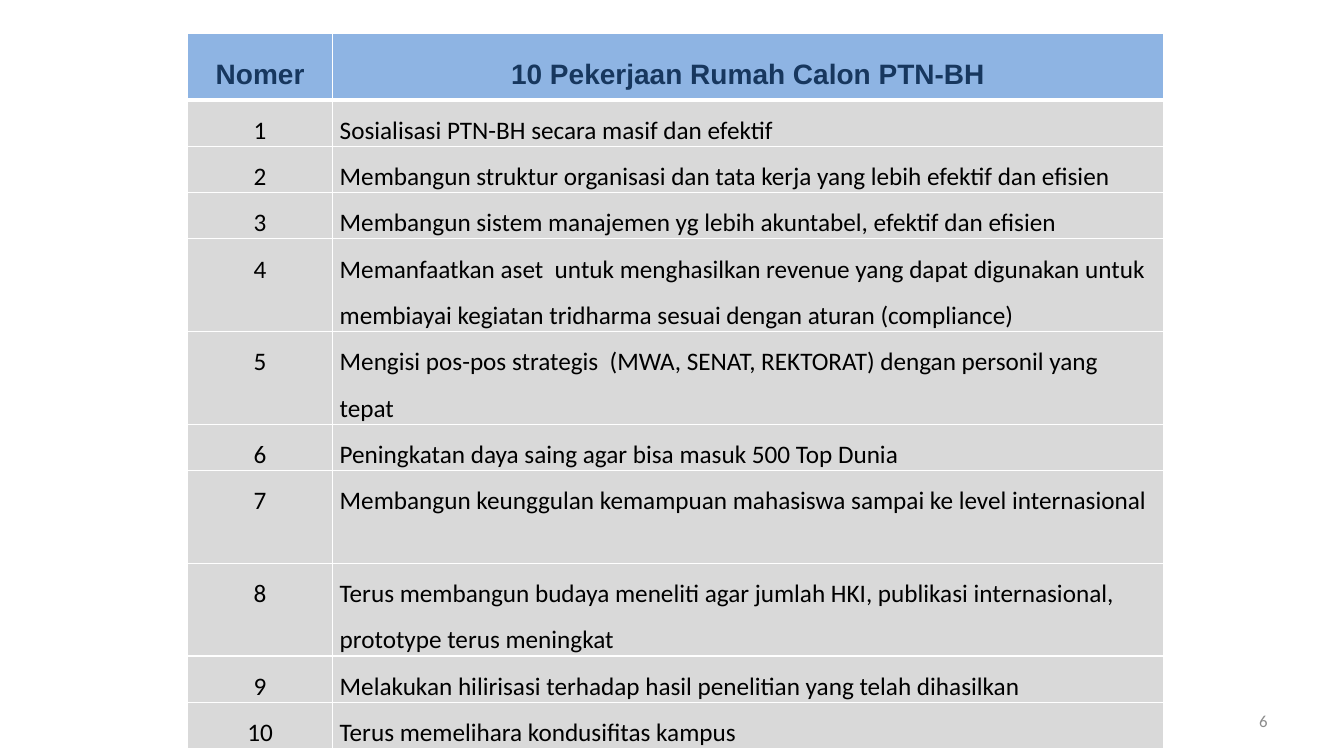
from lxml.etree import SubElement
from pptx import Presentation
from pptx.dml.color import RGBColor
from pptx.enum.text import MSO_ANCHOR, PP_ALIGN
from pptx.oxml.ns import qn
from pptx.util import Inches, Pt

WHITE = RGBColor(0xFF, 0xFF, 0xFF)
BLACK = RGBColor(0, 0, 0)
NAVY = RGBColor(0x17, 0x37, 0x5E)
HEADER_BLUE = RGBColor(0x8E, 0xB4, 0xE3)
BODY_GRAY = RGBColor(0xD9, 0xD9, 0xD9)
NUMBER_GRAY = RGBColor(0x8C, 0x8C, 0x8C)

COLUMN_WIDTHS = (1.44, 8.24)
HEADER_HEIGHT = 0.66
LINE_HEIGHT = 0.46
HEADINGS = ("Nomer", "10 Pekerjaan Rumah Calon PTN-BH")
# Each task with the number of lines its row holds
TASKS = (
    ("Sosialisasi PTN-BH secara masif dan efektif", 1),
    ("Membangun struktur organisasi dan tata kerja yang lebih efektif dan efisien", 1),
    ("Membangun sistem manajemen yg lebih akuntabel, efektif dan efisien", 1),
    ("Memanfaatkan aset  untuk menghasilkan revenue yang dapat digunakan untuk "
     "membiayai kegiatan tridharma sesuai dengan aturan (compliance)", 2),
    ("Mengisi pos-pos strategis  (MWA, SENAT, REKTORAT) dengan personil yang tepat", 2),
    ("Peningkatan daya saing agar bisa masuk 500 Top Dunia", 1),
    ("Membangun keunggulan kemampuan mahasiswa sampai ke level internasional", 2),
    ("Terus membangun budaya meneliti agar jumlah HKI, publikasi internasional, "
     "prototype terus meningkat", 2),
    ("Melakukan hilirisasi terhadap hasil penelitian yang telah dihasilkan", 1),
    ("Terus memelihara kondusifitas kampus", 1),
)


def write_text(frame, text, size=18, font="Calibri", color=BLACK, bold=False,
               align=PP_ALIGN.LEFT, line_spacing=1.0):
    frame.word_wrap = True
    para = frame.paragraphs[0]
    para.alignment = align
    para.line_spacing = line_spacing
    span = para.add_run()
    span.text = text
    span.font.size = Pt(size)
    span.font.name = font
    span.font.bold = bold
    span.font.color.rgb = color


def set_borders(cell, color, bottom=1, top=1):
    """Draw all four cell edges, with widths in points."""
    properties = cell._tc.get_or_add_tcPr()
    edges = (("a:lnL", 1), ("a:lnR", 1), ("a:lnT", top), ("a:lnB", bottom))
    for index, (tag, width) in enumerate(edges):
        line = SubElement(properties, qn(tag), w=str(Pt(width)))
        fill = SubElement(line, qn("a:solidFill"))
        SubElement(fill, qn("a:srgbClr"), val=str(color))
        properties.insert(index, line)


def format_cell(cell, text, fill, anchor=MSO_ANCHOR.TOP, bottom=1, top=1, **text_format):
    cell.margin_left = cell.margin_right = Inches(0.07)
    cell.margin_top = cell.margin_bottom = 0
    cell.vertical_anchor = anchor
    cell.fill.solid()
    cell.fill.fore_color.rgb = fill
    set_borders(cell, WHITE, bottom, top)
    write_text(cell.text_frame, text, line_spacing=1.5, **text_format)


def add_task_table(page, left, top):
    heights = [HEADER_HEIGHT] + [LINE_HEIGHT * lines for _, lines in TASKS]
    table = page.shapes.add_table(
        len(heights), len(COLUMN_WIDTHS), Inches(left), Inches(top),
        Inches(sum(COLUMN_WIDTHS)), Inches(sum(heights))).table
    for column, width in zip(table.columns, COLUMN_WIDTHS):
        column.width = Inches(width)
    for row, height in zip(table.rows, heights):
        row.height = Inches(height)

    for column, heading in enumerate(HEADINGS):
        format_cell(table.cell(0, column), heading, HEADER_BLUE, MSO_ANCHOR.MIDDLE,
                    bottom=3, size=20, font="Arial", color=NAVY, bold=True,
                    align=PP_ALIGN.CENTER)
    for number, (task, _) in enumerate(TASKS, start=1):
        top_width = 3 if number == 1 else 1
        format_cell(table.cell(number, 0), str(number), BODY_GRAY, top=top_width,
                    align=PP_ALIGN.CENTER)
        format_cell(table.cell(number, 1), task, BODY_GRAY, top=top_width)


def add_page_number(page, left, top, width, height):
    box = page.shapes.add_textbox(Inches(left), Inches(top), Inches(width), Inches(height))
    box.text_frame.vertical_anchor = MSO_ANCHOR.MIDDLE
    write_text(box.text_frame, "6", size=12, color=NUMBER_GRAY, align=PP_ALIGN.RIGHT)


def main():
    deck = Presentation()
    deck.slide_width = Inches(13.33)
    deck.slide_height = Inches(7.5)
    page = deck.slides.add_slide(deck.slide_layouts[6])
    add_page_number(page, 9.56, 6.95, 3.11, 0.4)
    add_task_table(page, 1.86, 0.33)
    deck.save("out.pptx")


if __name__ == "__main__":
    main()
